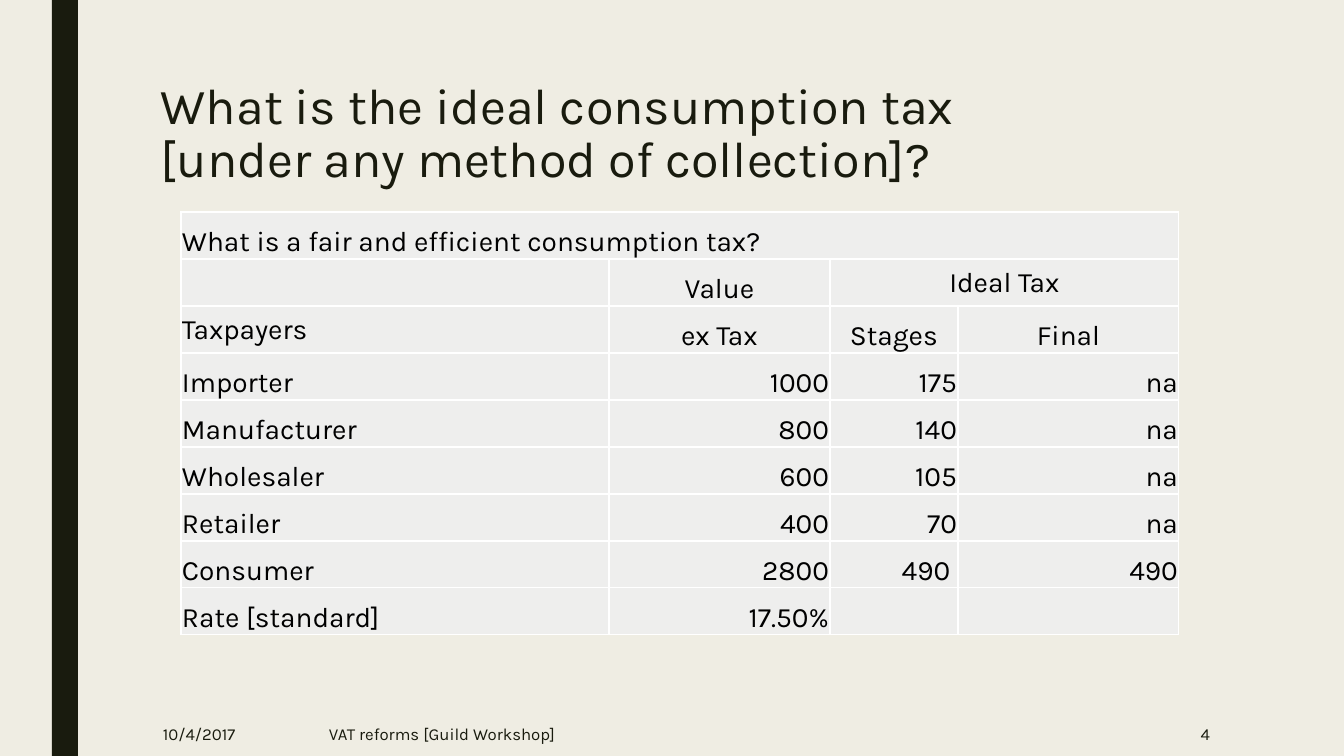
import lxml.etree
import pptx
import pptx.dml.color
import pptx.enum.shapes
import pptx.enum.text
import pptx.oxml.ns
import pptx.util

PX = 914400 / 100.8
FONT = "Karla"
COLORS = {
    "background": "EFEDE3",
    "dark": "191B0E",
    "cell": "EEEEED",
    "border": "FFFFFF",
    "table_text": "000000",
}
ALIGN = pptx.enum.text.PP_ALIGN
ANCHOR = pptx.enum.text.MSO_ANCHOR

TITLE = "What is the ideal consumption tax\v[under any method of collection]?"
COLUMN_WIDTHS = [428, 221, 128, 221]
ROW_HEIGHT = 47
HEADER_ROWS = 3
ROWS = [
    ["What is a fair and efficient consumption tax?", "", "", ""],
    ["", "Value", "Ideal Tax", ""],
    ["Taxpayers", "ex Tax", "Stages", "Final"],
    ["Importer", "1000", "175", "na"],
    ["Manufacturer", "800", "140", "na"],
    ["Wholesaler", "600", "105", "na"],
    ["Retailer", "400", "70", "na"],
    ["Consumer", "2800", "490 ", "490"],
    ["Rate [standard]", "17.50%", "", ""],
]
MERGES = [((0, 0), (0, 3)), ((1, 2), (1, 3))]
MIDDLE_CELLS = [(1, 2), (2, 0)]


def px(length):
    """Turn a length in px into EMU."""
    return pptx.util.Emu(round(length * PX))


def color(name):
    """Look up a named colour."""
    return pptx.dml.color.RGBColor.from_string(COLORS[name])


def write(text_frame, text, size, color_name, align=ALIGN.LEFT):
    """Put one formatted paragraph into a text frame and return it."""
    paragraph = text_frame.paragraphs[0]
    paragraph.text = text
    paragraph.alignment = align
    paragraph.font.size = pptx.util.Pt(size)
    for run in paragraph.runs:
        run.font.name = FONT
        run.font.size = pptx.util.Pt(size)
        run.font.color.rgb = color(color_name)
    return paragraph


def add_text(slide, box, text, size, align=ALIGN.LEFT, anchor=ANCHOR.MIDDLE):
    """Add a wrapped text box and return its paragraph."""
    text_frame = slide.shapes.add_textbox(*map(px, box)).text_frame
    text_frame.word_wrap = True
    text_frame.vertical_anchor = anchor
    return write(text_frame, text, size, "dark", align)


def add_side_bar(slide, box):
    """Add the dark vertical bar."""
    bar = slide.shapes.add_shape(pptx.enum.shapes.MSO_SHAPE.RECTANGLE, *map(px, box))
    bar.shadow.inherit = False
    bar.fill.solid()
    bar.fill.fore_color.rgb = color("dark")
    bar.line.fill.background()


def add_title(slide, box):
    """Add the two-line heading."""
    paragraph = add_text(slide, box, TITLE, 36, anchor=ANCHOR.TOP)
    paragraph.line_spacing = 0.89


def add_footer(slide, box):
    """Add the date, the event name and the slide number."""
    left, top, width, height = box
    add_text(slide, (left, top, 133, height), "10/4/2017", 12)
    add_text(slide, (left + 166, top, 692, height), "VAT reforms [Guild Workshop]", 12)
    add_text(slide, (left + width - 176, top, 176, height), "4", 12, ALIGN.RIGHT)


def set_borders(cell):
    """Draw a thin line on all four sides of a cell."""
    properties = cell._tc.get_or_add_tcPr()
    qn = pptx.oxml.ns.qn
    for index, side in enumerate(("a:lnL", "a:lnR", "a:lnT", "a:lnB")):
        line = lxml.etree.Element(qn(side), w=str(pptx.util.Pt(1)))
        fill = lxml.etree.SubElement(line, qn("a:solidFill"))
        lxml.etree.SubElement(fill, qn("a:srgbClr"), val=COLORS["border"])
        properties.insert(index, line)


def column_alignment(row, column):
    """Choose the alignment for a cell position."""
    if column == 0:
        return ALIGN.LEFT
    return ALIGN.CENTER if row < HEADER_ROWS else ALIGN.RIGHT


def add_tax_table(slide, left, top):
    """Add the table of taxes by taxpayer."""
    size = (sum(COLUMN_WIDTHS), ROW_HEIGHT * len(ROWS))
    frame = slide.shapes.add_table(
        len(ROWS), len(COLUMN_WIDTHS), *map(px, (left, top, *size))
    )
    table = frame.table
    table.first_row = False
    table.horz_banding = False
    for column, width in zip(table.columns, COLUMN_WIDTHS):
        column.width = px(width)
    for row_index, values in enumerate(ROWS):
        table.rows[row_index].height = px(ROW_HEIGHT)
        for column_index, value in enumerate(values):
            cell = table.cell(row_index, column_index)
            cell.margin_left = cell.margin_right = cell.margin_top = px(1)
            cell.margin_bottom = 0
            middle = (row_index, column_index) in MIDDLE_CELLS
            cell.vertical_anchor = ANCHOR.MIDDLE if middle else ANCHOR.BOTTOM
            cell.fill.solid()
            cell.fill.fore_color.rgb = color("cell")
            set_borders(cell)
            align = column_alignment(row_index, column_index)
            write(cell.text_frame, value, 20, "table_text", align)
    for first, last in MERGES:
        table.cell(*first).merge(table.cell(*last))


def main():
    """Build and save the slide."""
    presentation = pptx.Presentation()
    presentation.slide_width = px(1344)
    presentation.slide_height = px(756)
    slide = presentation.slides.add_slide(presentation.slide_layouts[6])
    slide.background.fill.solid()
    slide.background.fill.fore_color.rgb = color("background")
    add_side_bar(slide, (52, 0, 26, 756))
    add_title(slide, (151, 76, 1058, 136))
    add_footer(slide, (153, 712, 1067, 44))
    add_tax_table(slide, 181, 212)
    presentation.save("out.pptx")


if __name__ == "__main__":
    main()
